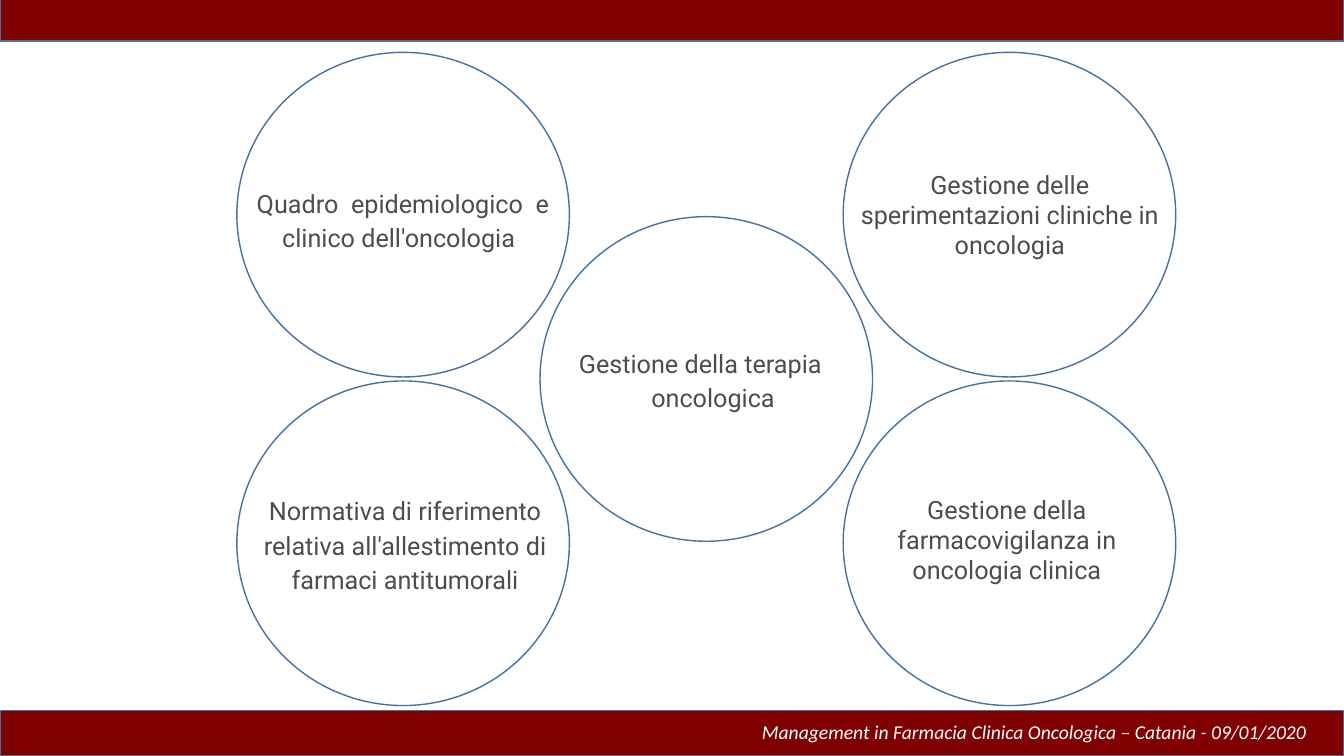
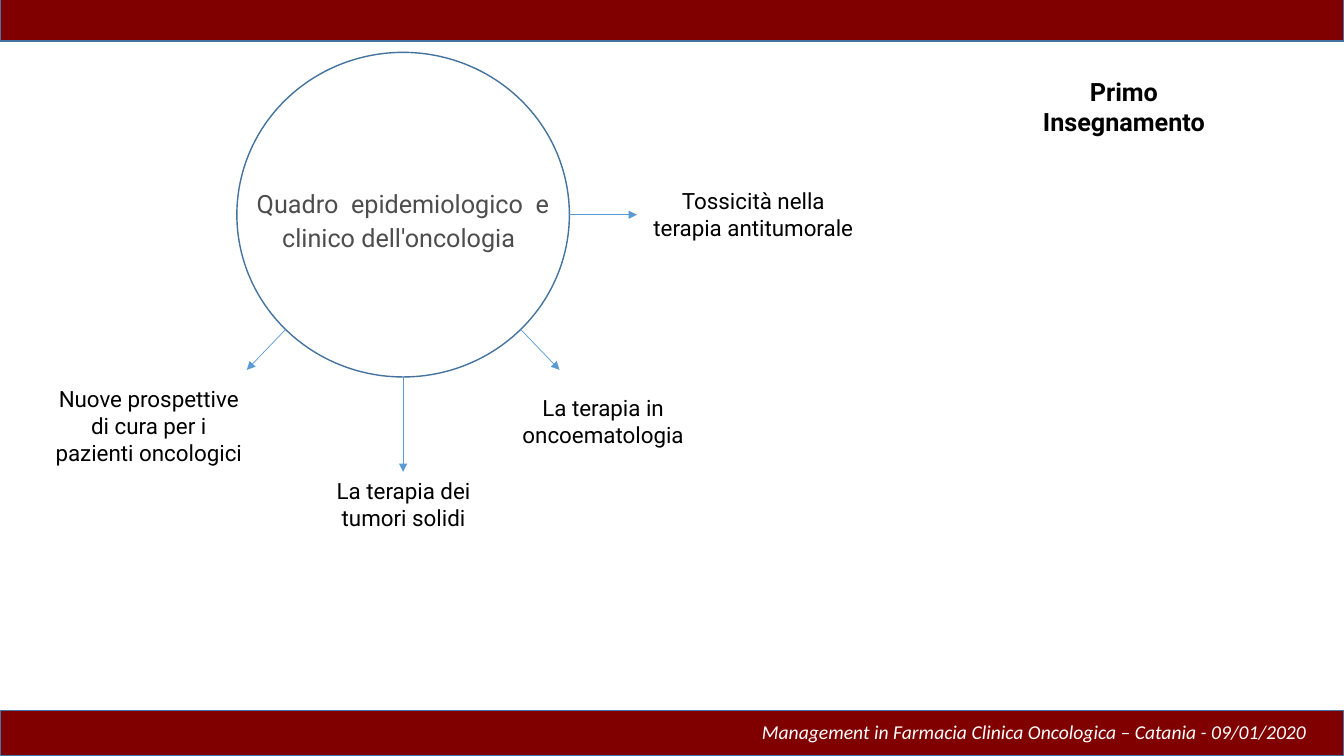
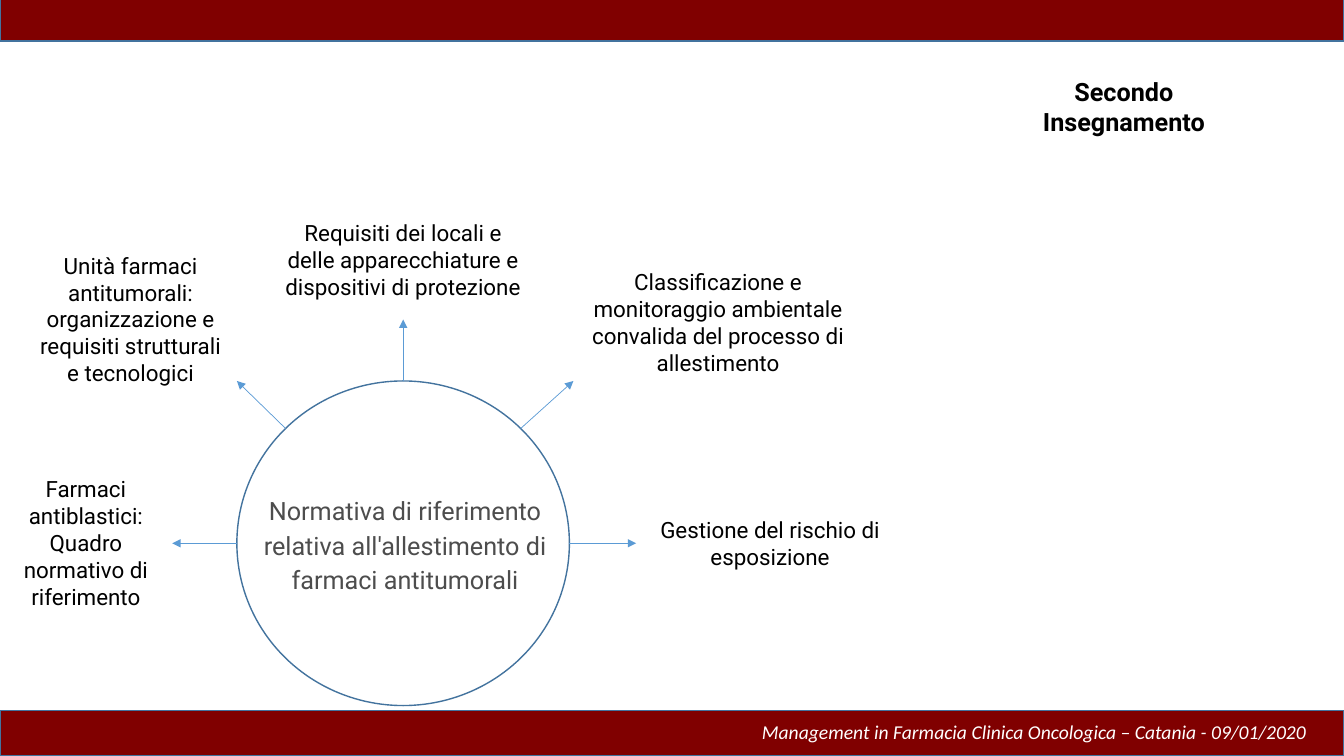
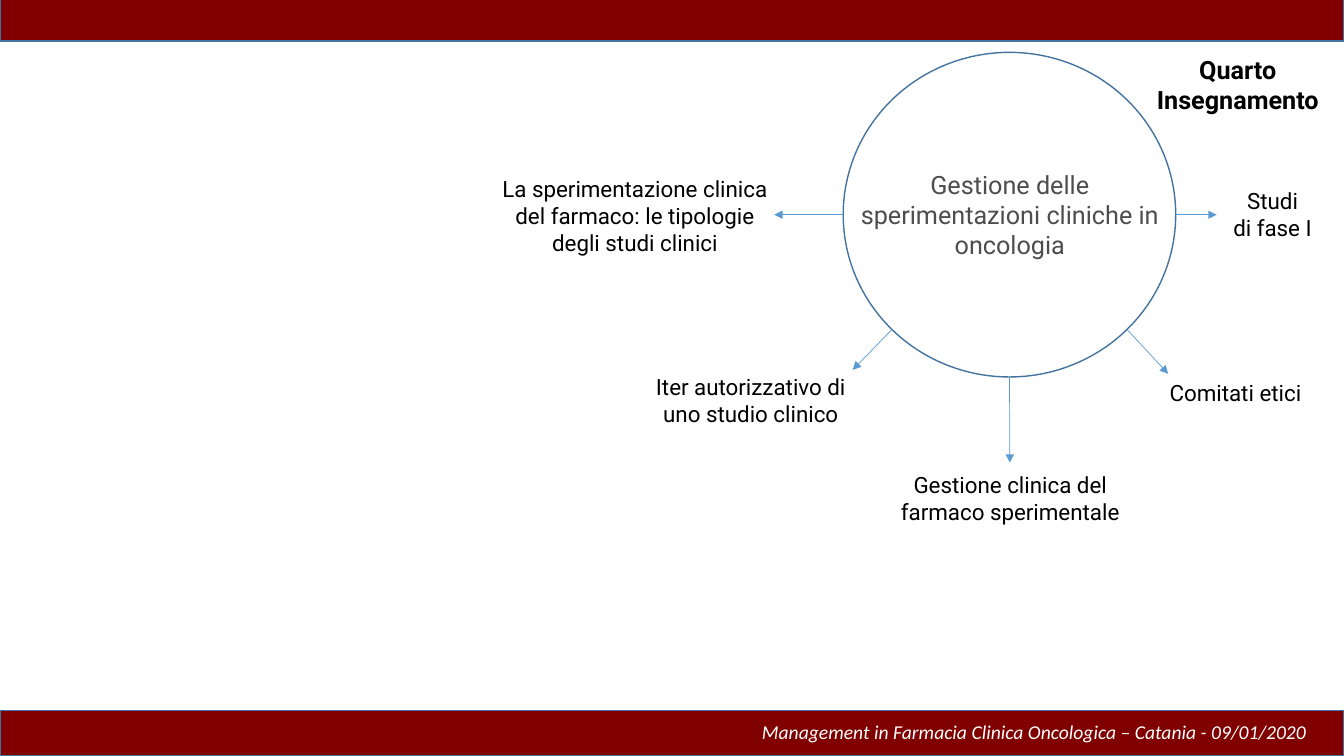
"""Build four slides on the teachings of clinical oncology pharmacy."""
from math import cos, radians, sin

from lxml import etree
from pptx import Presentation
from pptx.dml.color import RGBColor
from pptx.enum import shapes, text
from pptx.oxml import ns
from pptx.util import Cm, Pt

COLORS = {"band": "800000", "outline": "43739E", "arrow": "5B9BD5",
          "topic": "4D4D4D", "black": "000000", "white": "FFFFFF"}
CENTER, JUSTIFY, LEFT = (text.PP_ALIGN.CENTER, text.PP_ALIGN.JUSTIFY,
                         text.PP_ALIGN.LEFT)
W, H = 33.87, 19.05
BAND_H = 1.14
CIRCLE_W, CIRCLE_H = 8.38, 8.18
CIRCLE_X, CIRCLE_Y = 5.97, 1.32
STEP_X, STEP_Y = 7.64, 8.28


def add_text(slide, content, x, y, w, h, size=16, color="black", font="Roboto",
             bold=False, italic=False, align=CENTER, spacing=1.0, hanging=0):
    tb = slide.shapes.add_textbox(Cm(x), Cm(y), Cm(w), Cm(h))
    tf = tb.text_frame
    tf.word_wrap = True
    tf.auto_size = text.MSO_AUTO_SIZE.SHAPE_TO_FIT_TEXT
    for i, line in enumerate(content.split("\n")):
        p = tf.add_paragraph() if i else tf.paragraphs[0]
        p.alignment = align
        p.line_spacing = spacing
        if hanging:
            pPr = p._p.get_or_add_pPr()
            pPr.set("marL", str(Cm(hanging)))
            pPr.set("indent", str(Cm(-hanging)))
        r = p.add_run()
        r.text = line
        r.font.name = font
        r.font.size = Pt(size)
        r.font.bold = bold
        r.font.italic = italic
        r.font.color.rgb = RGBColor.from_string(COLORS[color])


TOPICS = {
    "quadro": (0, 0, "Quadro epidemiologico e clinico dell'oncologia",
               (6.22, 4.5, 7.87, 2.03),
               {"align": JUSTIFY, "spacing": 1.15, "hanging": 0.64}),
    "normativa": (0, 1, "Normativa di riferimento relativa all'allestimento "
                  "di farmaci antitumorali",
                  (5.97, 12.24, 8.48, 2.9), {"spacing": 1.15}),
    "terapia": (1, 0.5, "Gestione della terapia oncologica",
                (13.61, 8.53, 8.08, 2.03), {"spacing": 1.15, "hanging": 0.64}),
    "sperimentazioni": (2, 0, "Gestione delle sperimentazioni cliniche in oncologia",
                        (21.26, 4.14, 8.38, 2.64), {}),
    "farmacovigilanza": (2, 1, "Gestione della farmacovigilanza in oncologia clinica",
                         (21.36, 12.32, 8.03, 2.64), {}),
}

# Each branch: angle on the circle, arrow end, text, text left, top, width, lines
SLIDES = [
    (list(TOPICS), None, []),
    (["quadro"], ("Primo Insegnamento", 25.1, 1.8), [
        (135, (6.22, 9.32), "Nuove prospettive di cura per i pazienti oncologici",
         1.07, 9.58, 5.36, 3),
        (90, (10.16, 11.89), "La terapia dei tumori solidi", 7.49, 11.89, 5.36, 2),
        (45, (14.1, 9.32), "La terapia in oncoematologia", 12.52, 9.8, 5.36, 2),
        (0, (16.05, 5.41), "Tossicità nella terapia antitumorale",
         16.05, 4.6, 5.87, 2),
    ]),
    (["normativa"], ("Secondo Insegnamento", 25.1, 1.8), [
        (180, (4.34, 13.69), "Farmaci antiblastici:\nQuadro normativo di riferimento",
         -0.3, 11.86, 4.93, 5),
        (225, (5.97, 9.6), "Unità farmaci antitumorali: organizzazione e "
         "requisiti strutturali e tecnologici", 0.61, 6.22, 5.36, 5),
        (270, (10.16, 8.05), "Requisiti dei locali e delle apparecchiature e "
         "dispositivi di protezione", 6.83, 5.41, 6.65, 3),
        (315, (14.45, 9.6), "Classificazione e monitoraggio ambientale convalida "
         "del processo di allestimento", 14.63, 6.63, 6.93, 4),
        (0, (16.03, 13.69), "Gestione del rischio di esposizione",
         16.08, 12.88, 6.65, 2),
    ]),
    (["sperimentazioni"], ("Quarto Insegnamento", 27.97, 1.24), [
        (180, (19.51, 5.41), "La sperimentazione clinica del farmaco: le tipologie "
         "degli studi clinici", 12.24, 4.29, 7.52, 3),
        (135, (21.49, 9.32), "Iter autorizzativo di uno studio clinico",
         16, 9.27, 5.84, 2),
        (90, (25.45, 11.66), "Gestione clinica del farmaco sperimentale",
         22.4, 11.76, 6.12, 2),
        (45, (29.44, 9.42), "Comitati etici", 28.8, 9.42, 4.67, 1),
        (0, (30.66, 5.41), "Studi\ndi fase I", 30.43, 4.6, 3.28, 2),
    ]),
]

prs = Presentation()
prs.slide_width, prs.slide_height = Cm(W), Cm(H)

for topics, title, branches in SLIDES:
    s = prs.slides.add_slide(prs.slide_layouts[6])
    frames = [(shapes.MSO_SHAPE.RECTANGLE, 0, y, W, BAND_H, "band")
              for y in (H - BAND_H, -0.1)]
    for name in topics:
        col, row = TOPICS[name][:2]
        frames.append((shapes.MSO_SHAPE.OVAL, CIRCLE_X + col * STEP_X,
                       CIRCLE_Y + row * STEP_Y, CIRCLE_W, CIRCLE_H, None))
    for kind, x, y, w, h, fill in frames:
        sp = s.shapes.add_shape(kind, Cm(x), Cm(y), Cm(w), Cm(h))
        sp.shadow.inherit = False
        if fill:
            sp.fill.solid()
            sp.fill.fore_color.rgb = RGBColor.from_string(COLORS[fill])
        else:
            sp.fill.background()
        sp.line.color.rgb = RGBColor.from_string(COLORS["outline"])
        sp.line.width = Pt(1)

    add_text(s, "Management in Farmacia Clinica Oncologica – Catania - 09/01/2020",
             18.95, 18.01, 14.55, 0.86, size=14, color="white", font="Calibri",
             italic=True, align=LEFT)
    for name in topics:
        content, box, style = TOPICS[name][2:]
        add_text(s, content, *box, size=18, color="topic", **style)
    if title:
        add_text(s, *title, 6.45, 1.8, size=18, bold=True)

    col, row = TOPICS[topics[0]][:2]
    cx = CIRCLE_X + col * STEP_X + CIRCLE_W / 2
    cy = CIRCLE_Y + row * STEP_Y + CIRCLE_H / 2
    for angle, (end_x, end_y), content, x, y, w, lines in branches:
        start_x = cx + CIRCLE_W / 2 * cos(radians(angle))
        start_y = cy + CIRCLE_H / 2 * sin(radians(angle))
        cn = s.shapes.add_connector(shapes.MSO_CONNECTOR.STRAIGHT, Cm(start_x),
                                    Cm(start_y), Cm(end_x), Cm(end_y))
        cn.line.color.rgb = RGBColor.from_string(COLORS["arrow"])
        cn.line.width = Pt(0.5)
        etree.SubElement(cn.line._get_or_add_ln(), ns.qn("a:tailEnd"), type="triangle")
        etree.SubElement(cn._element.spPr, ns.qn("a:effectLst"))
        add_text(s, content, x, y, w, 0.25 + 0.69 * lines)

prs.save("out.pptx")
